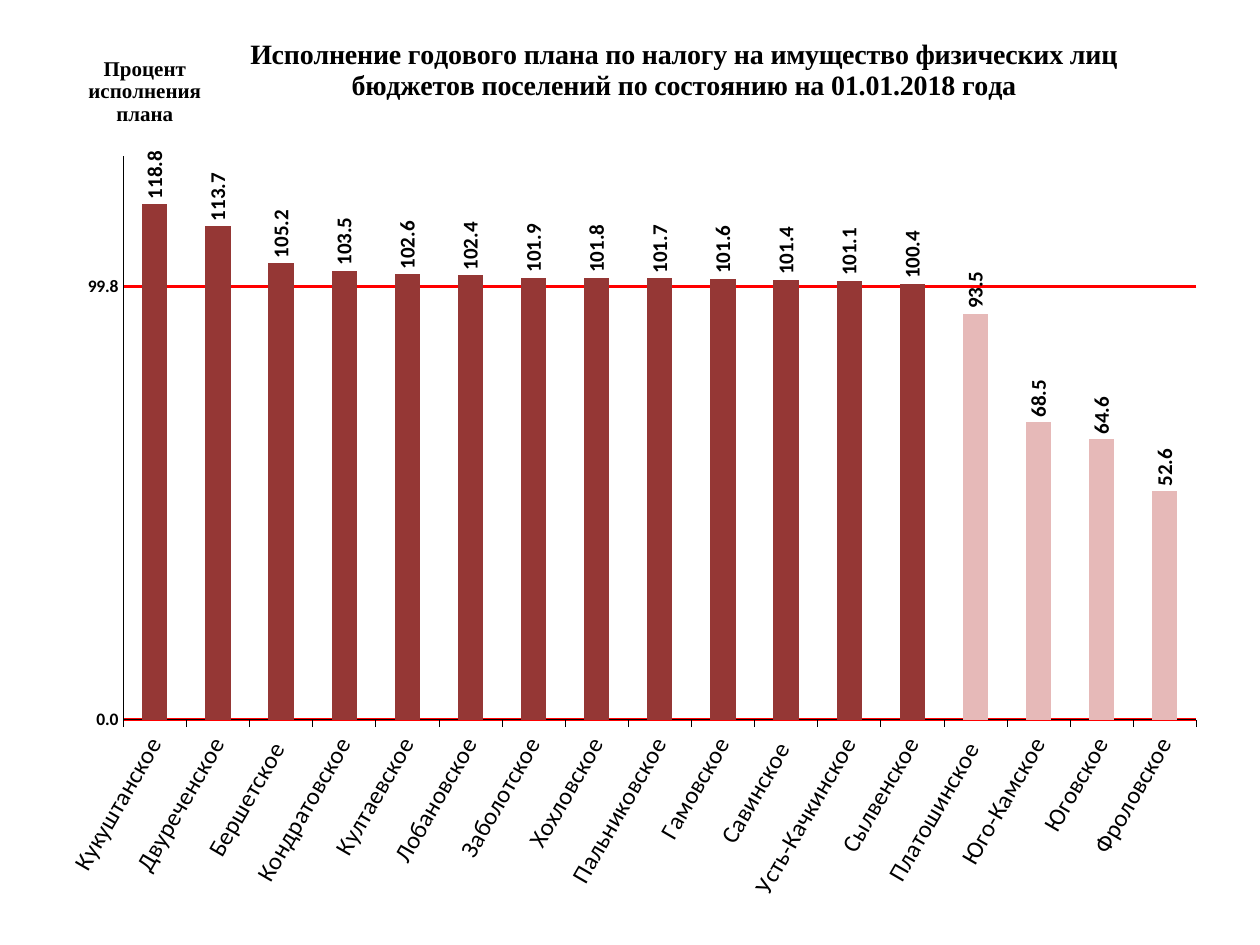
from lxml import etree
from pptx import Presentation, util as u
from pptx.chart.data import CategoryChartData
from pptx.dml.color import RGBColor
from pptx.enum import chart as kinds
from pptx.oxml.ns import qn


def paint(color_format, color):
    color_format.rgb = RGBColor.from_string(color)


def place(parent, index, **values):
    for old in parent.findall(qn("c:layout")):
        parent.remove(old)
    layout = etree.Element(qn("c:layout"))
    manual = etree.SubElement(layout, qn("c:manualLayout"))
    for tag, value in values.items():
        etree.SubElement(manual, qn(f"c:{tag}")).set("val", str(value))
    parent.insert(index, layout)


DARK, PALE, RED, BLACK = "953735", "E6B9B8", "FF0000", "000000"
PLAN = 99.8
results = {
    "Кукуштанское": 118.8, "Двуреченское": 113.7, "Бершетское ": 105.2,
    "Кондратовское": 103.5, "Култаевское": 102.6, "Лобановское": 102.4,
    "Заболотское": 101.9, "Хохловское": 101.8, "Пальниковское": 101.7,
    "Гамовское": 101.6, "Савинское ": 101.4, "Усть-Качкинское": 101.1,
    "Сылвенское": 100.4, "Платошинское ": 93.5, "Юго-Камское": 68.5,
    "Юговское": 64.6, "Фроловское": 52.6,
}

presentation = Presentation()
presentation.slide_width, presentation.slide_height = u.Cm(25.4), u.Cm(19.05)
slide = presentation.slides.add_slide(presentation.slide_layouts[6])

data = CategoryChartData(number_format="0.0")
data.categories = list(results)
data.add_series("Процент исполнения", list(results.values()))
chart = slide.shapes.add_chart(
    kinds.XL_CHART_TYPE.COLUMN_CLUSTERED,
    u.Cm(0.2), u.Cm(-0.1), u.Cm(25.1), u.Cm(19.05), data,
).chart
chart.has_legend = False
chart.font.name, chart.font.size = "Calibri", u.Pt(10)
paint(chart.font.color, BLACK)

category_axis, value_axis = chart.category_axis, chart.value_axis
chart.has_title = True
value_axis.has_title = True
titles = [
    (chart.chart_title, 16, [
        "Исполнение годового плана по налогу на имущество физических лиц",
        "бюджетов поселений по состоянию на 01.01.2018 года",
    ]),
    (value_axis.axis_title, 12, ["Процент", "исполнения", "плана"]),
]
for title, size, lines in titles:
    frame = title.text_frame
    for number, line in enumerate(lines):
        paragraph = frame.add_paragraph() if number else frame.paragraphs[0]
        run = paragraph.add_run()
        run.text = line
        run.font.name, run.font.size, run.font.bold = "Times New Roman", u.Pt(size), True
        paint(run.font.color, BLACK)

for axis, size, bold in [(category_axis, 14, False), (value_axis, 10, True)]:
    font = axis.tick_labels.font
    font.name, font.size, font.bold = "Calibri", u.Pt(size), bold
    paint(font.color, BLACK)
    axis.format.line.width = u.Pt(0.25)
    paint(axis.format.line.fill.fore_color if axis.format.line.fill.solid() else axis.format.line.color, BLACK)
    axis.minor_tick_mark = kinds.XL_TICK_MARK.NONE

category_axis.major_tick_mark = kinds.XL_TICK_MARK.OUTSIDE
value_axis.major_tick_mark = kinds.XL_TICK_MARK.NONE
value_axis.minimum_scale, value_axis.maximum_scale = 0, 130
value_axis.major_unit = PLAN
value_axis.tick_labels.number_format = "0.0"
value_axis.tick_labels.number_format_is_linked = False
value_axis.has_major_gridlines = True
plan_line = value_axis.major_gridlines.format.line
plan_line.width = u.Pt(2)
paint(plan_line.color, RED)

plot = chart.plots[0]
plot.gap_width = 150
plot.vary_by_categories = False
series = plot.series[0]
series.format.fill.solid()
paint(series.format.fill.fore_color, DARK)
for number, value in enumerate(results.values()):
    if value < PLAN:
        fill = series.points[number].format.fill
        fill.solid()
        paint(fill.fore_color, PALE)

labels = series.data_labels
labels.show_value = True
labels.position = kinds.XL_LABEL_POSITION.OUTSIDE_END
labels.number_format, labels.number_format_is_linked = "#,##0.0", False
labels.font.name, labels.font.size, labels.font.bold = "Calibri", u.Pt(12), True
paint(labels.font.color, BLACK)

rotations = {
    "c:dLbls/c:txPr": -90,
    "c:catAx/c:txPr": -60,
    "c:valAx/c:title/c:tx/c:rich": 0,
}
for parent, degrees in rotations.items():
    for body in chart.element.xpath(f".//{parent}/a:bodyPr"):
        body.set("rot", str(degrees * 60000))
        body.set("vert", "horz")

place(chart.element.xpath("c:chart/c:title")[0], 1, xMode="edge", yMode="edge", x=0.19, y=0.04)
place(chart.element.xpath(".//c:valAx/c:title")[0], 1, xMode="edge", yMode="edge", x=0.06, y=0.06)
place(chart.element.xpath(".//c:plotArea")[0], 0, layoutTarget="inner", xMode="edge",
      yMode="edge", x=0.091, y=0.17, w=0.862, h=0.597)

presentation.save("out.pptx")
